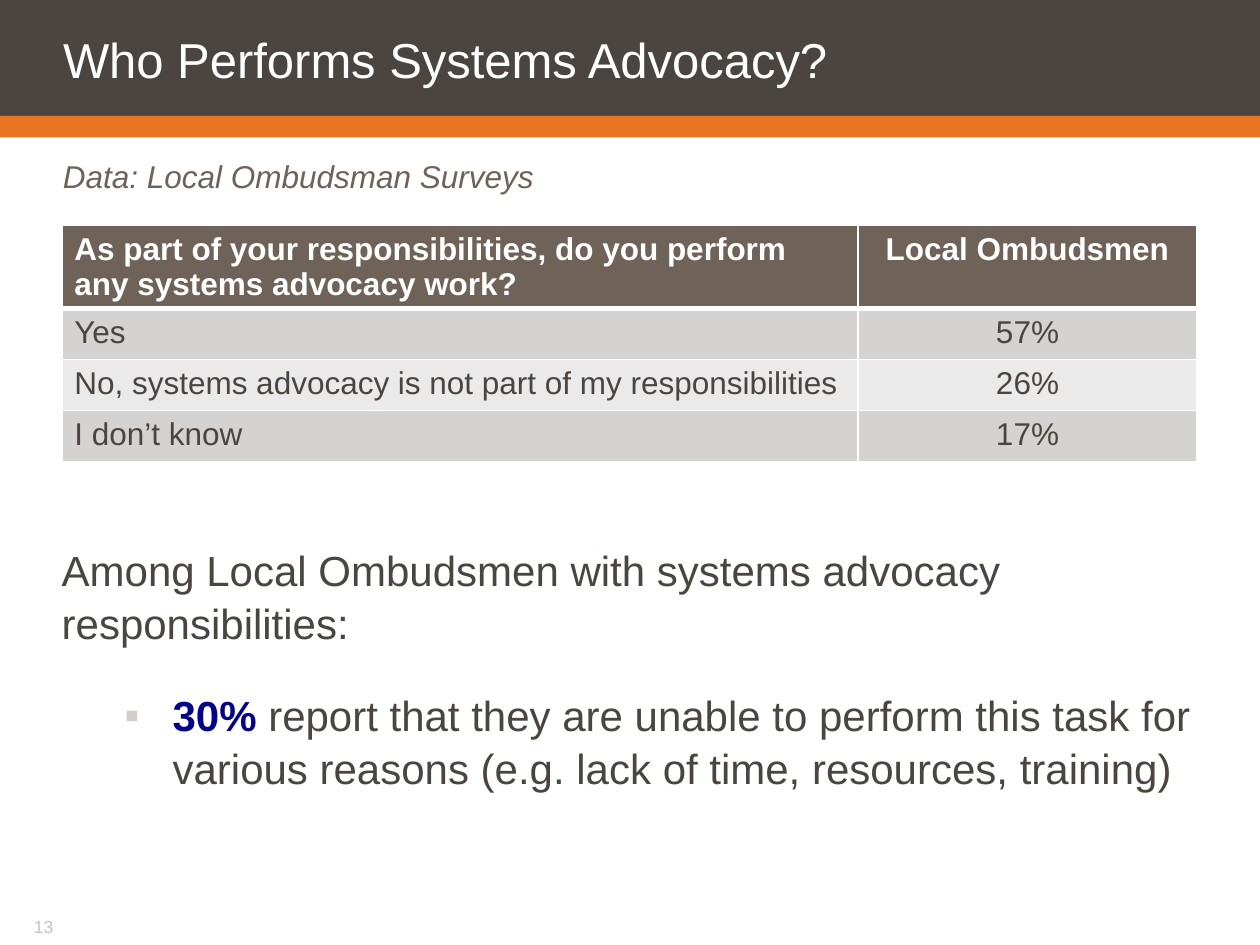
from typing import NamedTuple

from lxml import etree
from pptx import Presentation
from pptx import util as u
from pptx.dml.color import RGBColor
from pptx.enum import shapes, text
from pptx.oxml import ns

COLORS = {
    "dark": "4A4541", "orange": "E87424", "brown": "6E6259", "navy": "040488",
    "white": "FFFFFF", "band": "D5D3D1", "light": "EBEAEA",
    "bullet": "D1CDCA", "number": "C8C2BF",
}
FONT = "Arial"
CELL = u.Inches(0.1)  # the slide is a grid of 100 columns by 75 rows
COLS, ROWS = 100, 75


class Box(NamedTuple):
    col: float
    row: float
    cols: float
    rows: float

    def emu(self) -> list[int]:
        return [round(v * CELL) for v in self]


class Answer(NamedTuple):
    label: str
    share: str
    fill: str


TITLE = Box(0, 0, COLS, 9.2)
STRIPE = Box(0, TITLE.rows, COLS, 1.7)
SUBTITLE = Box(0, 12, COLS, 3.5)
TABLE = Box(4.9, 17.9, 90.1, 18.8)
BODY = Box(4.9, 42.5, 90, 20)
NUMBER = Box(1.7, 72.7, 19.2, 1.8)
COL_WIDTHS = (63.2, 26.9)
ROW_HEIGHTS = (6.6, 4.05, 4.05, 4.05)
ANSWERS = [
    Answer("As part of your responsibilities, do you perform any systems advocacy work?",
           "Local Ombudsmen", "brown"),
    Answer("Yes", "57%", "band"),
    Answer("No, systems advocacy is not part of my responsibilities", "26%", "light"),
    Answer("I don’t know", "17%", "band"),
]


def rgb(name: str) -> RGBColor:
    return RGBColor.from_string(COLORS[name])


def add_run(p, words: str, *, size=18, color="dark", bold=False, italic=False) -> None:
    r = p.add_run()
    r.text = words
    f = r.font
    f.name, f.size, f.bold, f.italic = FONT, u.Pt(size), bold, italic
    f.color.rgb = rgb(color)


def set_frame(tf, insets: tuple, wrap=True, anchor=text.MSO_ANCHOR.TOP) -> None:
    """Insets are left, top, right and bottom, in inches."""
    tf.margin_left, tf.margin_top, tf.margin_right, tf.margin_bottom = map(u.Inches, insets)
    tf.word_wrap, tf.vertical_anchor = wrap, anchor
    tf.auto_size = text.MSO_AUTO_SIZE.NONE


def add_text(s, box: Box, insets: tuple, wrap=True):
    tf = s.shapes.add_textbox(*box.emu()).text_frame
    set_frame(tf, insets, wrap)
    return tf


def add_band(s, box: Box, fill: str) -> None:
    sp = s.shapes.add_shape(shapes.MSO_SHAPE.RECTANGLE, *box.emu())
    sp.shadow.inherit = False
    sp.fill.solid()
    sp.fill.fore_color.rgb = rgb(fill)
    sp.line.fill.background()


def set_bullet(p, char: str, color: str, left: float, hanging: float) -> None:
    pr = p._p.get_or_add_pPr()
    pr.set("marL", str(u.Inches(left)))
    pr.set("indent", str(-u.Inches(hanging)))
    clr = etree.SubElement(pr, ns.qn("a:buClr"))
    etree.SubElement(clr, ns.qn("a:srgbClr"), val=COLORS[color])
    etree.SubElement(pr, ns.qn("a:buFont"), typeface=FONT)
    etree.SubElement(pr, ns.qn("a:buChar"), char=char)


def set_borders(cell, **widths: float) -> None:
    """Draw white borders, given as side=points, before the cell is filled."""
    pr = cell._tc.get_or_add_tcPr()
    for side, width in widths.items():
        ln = etree.SubElement(pr, ns.qn(f"a:ln{side}"), w=str(u.Pt(width)))
        fill = etree.SubElement(ln, ns.qn("a:solidFill"))
        etree.SubElement(fill, ns.qn("a:srgbClr"), val=COLORS["white"])


def add_answers(s) -> None:
    table = s.shapes.add_table(len(ANSWERS), len(COL_WIDTHS), *TABLE.emu()).table
    for column, width in zip(table.columns, COL_WIDTHS):
        column.width = round(width * CELL)
    for i, (answer, height) in enumerate(zip(ANSWERS, ROW_HEIGHTS)):
        table.rows[i].height = round(height * CELL)
        header = i == 0
        for j, words in enumerate((answer.label, answer.share)):
            cell = table.cell(i, j)
            set_borders(cell, L=1, R=1, T=3 if i == 1 else 1, B=3 if header else 1)
            cell.fill.solid()
            cell.fill.fore_color.rgb = rgb(answer.fill)
            p = cell.text_frame.paragraphs[0]
            p.alignment = text.PP_ALIGN.CENTER if j else text.PP_ALIGN.LEFT
            add_run(p, words, color="white" if header else "dark", bold=header)


def add_title(s, words: str) -> None:
    title = s.shapes.title
    title.left, title.top, title.width, title.height = TITLE.emu()
    s.shapes.element.append(title.element)  # in front of the dark band
    set_frame(title.text_frame, (0.5, 0.1, 0.1, 0), anchor=text.MSO_ANCHOR.MIDDLE)
    p = title.text_frame.paragraphs[0]
    p.alignment, p.line_spacing = text.PP_ALIGN.LEFT, u.Pt(28)
    add_run(p, words, size=28, color="white")


def add_findings(s) -> None:
    tf = add_text(s, BODY, (0, 0.05, 0, 0.05))
    p = tf.paragraphs[0]
    p.line_spacing, p.space_after = 1.05, u.Pt(12)
    add_run(p, "Among Local Ombudsmen with systems advocacy responsibilities:", size=24)
    p = tf.add_paragraph()
    p.level, p.line_spacing, p.space_before = 1, 1.05, u.Pt(10.8)
    set_bullet(p, "▪", "bullet", left=0.88, hanging=0.38)
    add_run(p, "30% ", size=24, color="navy", bold=True)
    add_run(p, "report that they are unable to perform this task for various reasons "
               "(e.g. lack of time, resources, training)", size=24)


def main() -> None:
    prs = Presentation()
    prs.slide_width, prs.slide_height = COLS * CELL, ROWS * CELL
    s = prs.slides.add_slide(prs.slide_layouts[5])
    add_band(s, TITLE, "dark")
    add_band(s, STRIPE, "orange")
    add_title(s, "Who Performs Systems Advocacy?")
    tf = add_text(s, SUBTITLE, (0.5, 0.05, 0, 0.05))
    add_run(tf.paragraphs[0], "Data: Local Ombudsman Surveys", color="brown", italic=True)
    add_answers(s)
    add_findings(s)
    tf = add_text(s, NUMBER, (0.1, 0, 0.1, 0.05), wrap=False)
    add_run(tf.paragraphs[0], "13", size=10, color="number")
    prs.save("out.pptx")


if __name__ == "__main__":
    main()
